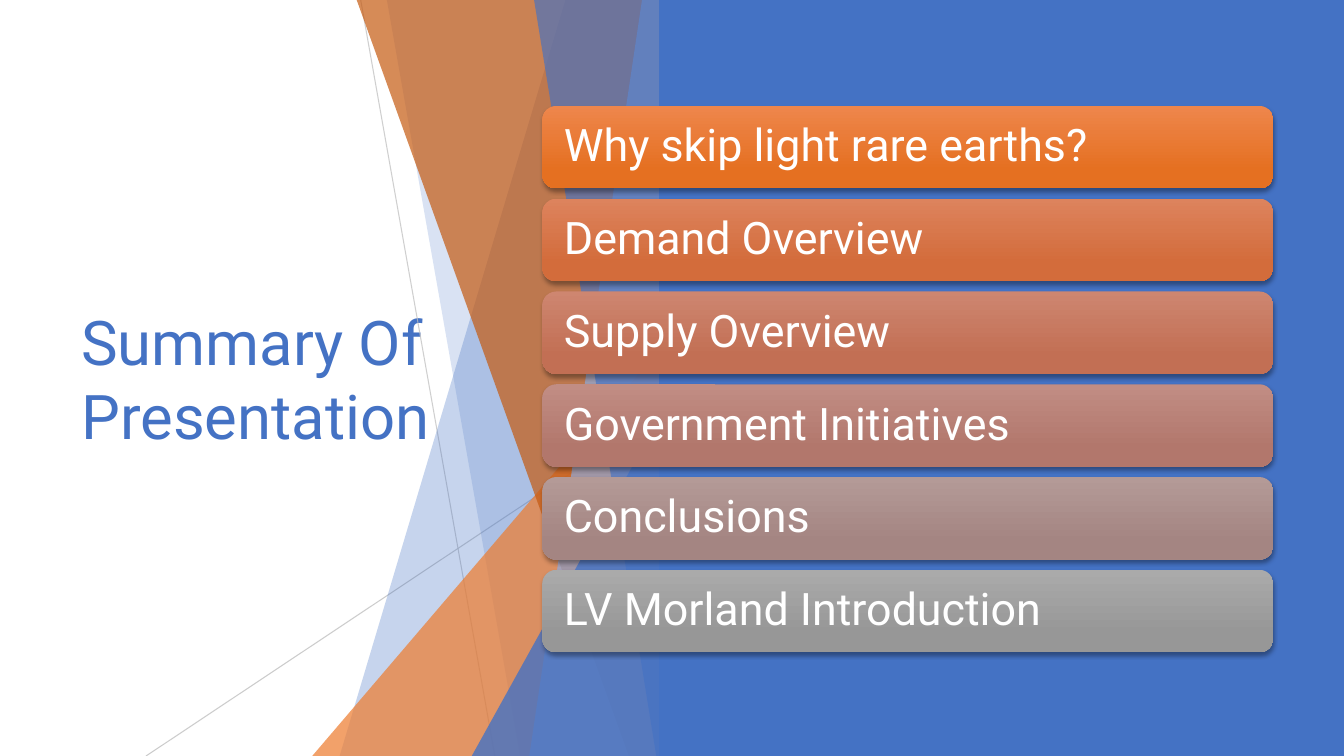
from lxml.etree import SubElement
from pptx import Presentation
from pptx.dml.color import RGBColor
from pptx.enum.shapes import MSO_CONNECTOR, MSO_SHAPE
from pptx.enum.text import MSO_ANCHOR, PP_ALIGN
from pptx.oxml.ns import qn
from pptx.util import Cm, Pt

WIDE, HIGH = 33.87, 19.05
BLUE, WHITE = "4472C4", "FFFFFF"
FONT = "Roboto"

# Label, gradient top, gradient bottom
TOPICS = [
    ("Why skip light rare earths?", "EE864C", "E57021"),
    ("Demand Overview", "DD835D", "D36C3B"),
    ("Supply Overview", "CE8670", "C26F54"),
    ("Government Initiatives", "C18D84", "B2776C"),
    ("Conclusions", "B49A97", "A48582"),
    ("LV Morland Introduction", "AAAAAA", "979797"),
]

# Thin lines: start x, y, end x, y, opacity
RAYS = [(5.41, 0, 8.79, 19.05, 75), (13.24, 10.24, 0, 19.05, 80)]

# Facets that reach the right edge, back to front:
# ("slant", top x, bottom x, colour, opacity)
# ("peak", left x, top y, colour, opacity)
FACETS = [
    ("slant", 10.57, 4.88, BLUE, 30),
    ("slant", 6.07, 9.43, BLUE, 20),
    ("peak", 4.19, 8.46, "ED7D31", 72),
    ("slant", 5.31, 12.17, "C55A11", 70),
    ("slant", 12.5, 9.66, "8FAADC", 70),
    ("slant", 9.78, 12.86, BLUE, 65),
    ("peak", 8.21, 9.98, BLUE, 80),
]


def tint(code):
    return RGBColor.from_string(code)


def fade(shape, share):
    """Set the opacity, in percent, of the shape's colour."""
    for node in shape._element.spPr.iter(qn("a:srgbClr")):
        SubElement(node, qn("a:alpha"), val=str(share * 1000))


def paint(shape, code):
    shape.shadow.inherit = False
    shape.fill.solid()
    shape.fill.fore_color.rgb = tint(code)
    shape.line.fill.background()


def write(frame, text, size, code):
    frame.word_wrap = True
    frame.vertical_anchor = MSO_ANCHOR.MIDDLE
    frame.text = text
    para = frame.paragraphs[0]
    para.alignment = PP_ALIGN.LEFT
    font = para.runs[0].font
    font.name, font.size = FONT, Pt(size)
    font.color.rgb = tint(code)
    return para


def add_title(slide, x, y, w, h):
    box = slide.shapes.add_textbox(Cm(x), Cm(y), Cm(w), Cm(h))
    write(box.text_frame, "Summary Of Presentation", 44, BLUE)


def add_facets(slide, x, y, w, h):
    shapes = slide.shapes
    # Thin lines
    for ax, ay, bx, by, share in RAYS:
        ray = shapes.add_connector(MSO_CONNECTOR.STRAIGHT, Cm(x + ax),
                                   Cm(y + ay), Cm(x + bx), Cm(y + by))
        ray.line.width = Pt(0.75)
        ray.line.color.rgb = tint("BFBFBF")
        fade(ray, share)
        SubElement(ray._element.spPr, qn("a:effectLst"))
    # Translucent facets
    for kind, a, b, code, share in FACETS:
        if kind == "slant":
            path = shapes.build_freeform(Cm(x + a), Cm(y))
            path.add_line_segments([(Cm(x + w), Cm(y)),
                                    (Cm(x + w), Cm(y + h)),
                                    (Cm(x + b), Cm(y + h))])
            facet = path.convert_to_shape()
        else:
            facet = shapes.add_shape(MSO_SHAPE.ISOSCELES_TRIANGLE, Cm(x + a),
                                     Cm(y + b), Cm(w - a), Cm(h - b))
            facet.adjustments[0] = 1
        paint(facet, code)
        fade(facet, share)


def add_panel(slide, x, y, w, h):
    panel = slide.shapes.add_shape(MSO_SHAPE.RECTANGLE,
                                   Cm(x), Cm(y), Cm(w), Cm(h))
    paint(panel, BLUE)


def add_shade(bar):
    """Give the bar a soft shadow below."""
    bar.shadow.inherit = False
    effects = bar._element.spPr.find(qn("a:effectLst"))
    shade = SubElement(effects, qn("a:outerShdw"), blurRad=str(Pt(3)),
                       dist=str(Pt(2)), dir="5400000", algn="ctr",
                       rotWithShape="0")
    node = SubElement(shade, qn("a:srgbClr"), val="000000")
    SubElement(node, qn("a:alpha"), val="35000")


def add_topics(slide, x, y, w, h):
    tall = 2.08
    step = (h - tall) / (len(TOPICS) - 1)
    for i, (label, top, base) in enumerate(TOPICS):
        bar = slide.shapes.add_shape(MSO_SHAPE.ROUNDED_RECTANGLE, Cm(x),
                                     Cm(y + i * step), Cm(w), Cm(tall))
        bar.line.fill.background()
        # Gradient from top to bottom
        bar.fill.gradient()
        bar.fill.gradient_angle = 270
        for stop, code, place in zip(bar.fill.gradient_stops,
                                     (top, base), (0, 0.78)):
            stop.color.rgb = tint(code)
            stop.position = place
        add_shade(bar)
        # Label
        frame = bar.text_frame
        frame.margin_left = frame.margin_right = Cm(0.44)
        para = write(frame, label, 32, WHITE)
        para.line_spacing = 0.9


def main():
    deck = Presentation()
    deck.slide_width, deck.slide_height = Cm(WIDE), Cm(HIGH)
    slide = deck.slides.add_slide(deck.slide_layouts[6])
    add_title(slide, 1.8, 3.84, 9.86, 11.38)
    add_facets(slide, 3.68, 0, 13.24, HIGH)
    add_panel(slide, 16.61, 0, WIDE - 16.61, HIGH)
    add_topics(slide, 13.67, 2.67, 18.42, 13.77)
    deck.save("out.pptx")


if __name__ == "__main__":
    main()
